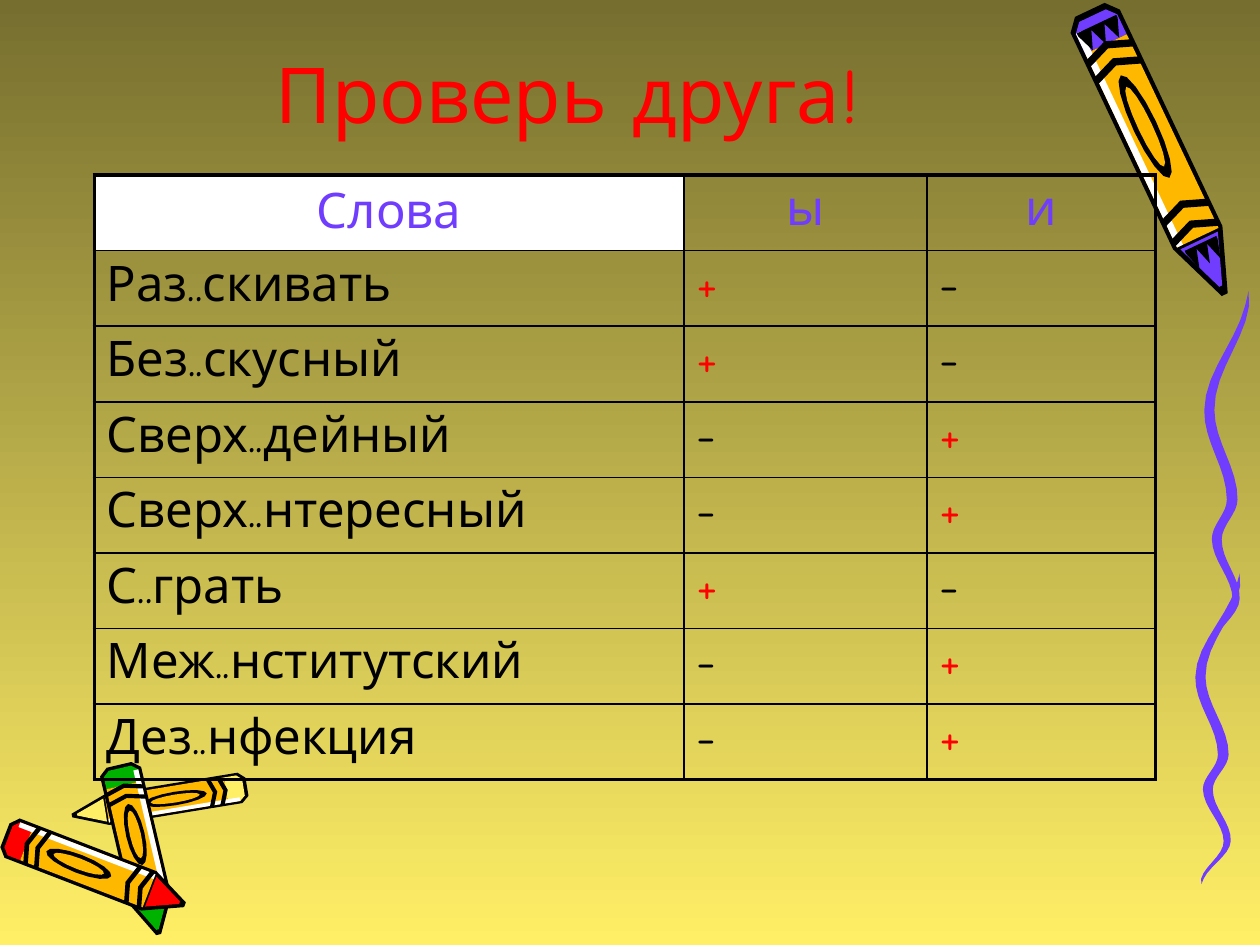
import math

import lxml.etree
import pptx
import pptx.dml.color
import pptx.enum.text
import pptx.oxml
import pptx.oxml.ns
import pptx.util

Cm, Pt = pptx.util.Cm, pptx.util.Pt
ALIGN, ANCHOR = pptx.enum.text.PP_ALIGN, pptx.enum.text.MSO_ANCHOR
qn = pptx.oxml.ns.qn

COLORS = {
    "olive": "766E2F", "sand": "FFEF66", "red": "FF0000", "violet": "703DFF",
    "black": "000000", "white": "FFFFFF", "orange": "FFB800", "green": "00B200",
}
FONT = "Comic Neue"
LETTERS = ("ы", "и")
WORDS = [
    ("Раз..скивать", "ы"), ("Без..скусный", "ы"), ("Сверх..дейный", "и"),
    ("Сверх..нтересный", "и"), ("С..грать", "ы"), ("Меж..нститутский", "и"),
    ("Дез..нфекция", "и"),
]
# Turning points of the ribbon in cm: x, y
RIBBON_TURNS = [(0.89, 0), (0.1, 2.4), (0.56, 4.2), (0.25, 5), (0.64, 6.2), (0.12, 7.2)]


def rgb(name):
    return pptx.dml.color.RGBColor.from_string(COLORS[name])


def write_text(frame, text, size=28, color="black", align=ALIGN.LEFT,
               anchor=ANCHOR.TOP, before=None):
    frame.word_wrap = True
    frame.vertical_anchor = anchor
    paragraph = frame.paragraphs[0]
    paragraph.alignment = align
    if before:  # space before, in percent of the line
        spacing = lxml.etree.SubElement(paragraph._p.get_or_add_pPr(), qn("a:spcBef"))
        lxml.etree.SubElement(spacing, qn("a:spcPct"), val=str(before * 1000))
    run = paragraph.add_run()
    run.text = text
    run.font.name, run.font.size = FONT, Pt(size)
    run.font.color.rgb = rgb(color)


def paint_background(slide):
    fill = slide.background.fill
    fill.gradient()
    fill.gradient_angle = 270
    for stop, name in zip(fill.gradient_stops, ("olive", "sand")):
        stop.color.rgb = rgb(name)


def draw_outline(slide, left, top, points, color):
    """Fill the outline through points, given in cm from the corner left, top."""
    corners = [(left + Cm(x), top + Cm(y)) for x, y in points]
    builder = slide.shapes.build_freeform(*corners[0])
    builder.add_line_segments(corners[1:], close=True)
    outline = builder.convert_to_shape()
    outline.shadow.inherit = False
    outline.fill.solid()
    outline.fill.fore_color.rgb = rgb(color)
    outline.line.fill.background()


# Crayon parts: (along, across) with along 0 at the butt and 1 at the tip,
# and across from -0.5 to 0.5 over the width.
def stripe(start, end, low=-0.42, high=0.42):
    return [(start, low), (end, low), (end, high), (start, high)]


def arched_band(start, thickness=0.025, rise=0.03):
    sides = [(start, -0.45), (start - rise, 0), (start, 0.45)]
    return sides + [(along + thickness, across) for along, across in reversed(sides)]


def oval(center, length, width, corners=16):
    angles = [2 * math.pi * i / corners for i in range(corners)]
    return [(center + length / 2 * math.cos(a), width / 2 * math.sin(a)) for a in angles]


def zigzag(base, depth, teeth, half=0.4):
    step = 2 * half / (2 * teeth)
    edge = [(base + depth * (i % 2), -half + i * step) for i in range(2 * teeth + 1)]
    return [(base - 0.01, -half)] + edge + [(base - 0.01, half)]


def draw_crayon(slide, left, top, butt, tip, width, color, light, teeth=0):
    """Draw a crayon from butt to tip; light is the side (1 or -1) of the highlight."""
    length = math.dist(butt, tip)
    dx, dy = ((end - start) / length for start, end in zip(butt, tip))

    def place(part):
        return [(butt[0] + along * length * dx - across * width * dy,
                 butt[1] + along * length * dy + across * width * dx)
                for along, across in part]

    silhouette = [(0, -0.3), (0.04, -0.5), (0.8, -0.5), (1, -0.06),
                  (1, 0.06), (0.8, 0.5), (0.04, 0.5), (0, 0.3)]
    parts = [
        ("black", silhouette),
        (color, [(0.02, -0.27), (0.05, -0.42), (0.12, -0.42),
                 (0.12, 0.42), (0.05, 0.42), (0.02, 0.27)]),
        ("orange", stripe(0.12, 0.8)),
        ("white", stripe(0.05, 0.8, light * 0.3, light * 0.42)),
        ("black", oval(0.41, 0.36, 0.44)),
        ("orange", oval(0.41, 0.28, 0.26)),
        (color, [(0.81, -0.38), (0.97, -0.03), (0.97, 0.03), (0.81, 0.38)]),
    ]
    parts += [("black", arched_band(start)) for start in (0.14, 0.2, 0.7, 0.77)]
    if teeth:
        parts += [("black", zigzag(base, 0.06, teeth, half))
                  for base, half in ((0.06, 0.4), (0.83, 0.32))]
    for part_color, part in parts:
        draw_outline(slide, left, top, place(part), part_color)


def draw_crayon_pile(slide, left, top):
    draw_crayon(slide, left, top, (4.98, 0.62), (1.45, 1.2), 0.62, "sand", light=-1)
    draw_crayon(slide, left, top, (2.4, 0.18), (3.2, 3.6), 0.85, "green", light=-1)
    draw_crayon(slide, left, top, (0.1, 1.6), (3.73, 3), 0.85, "red", light=-1)


def draw_ribbon(slide, left, top, stretch=1, thickness=0.22, steps=8):
    """Ease from turn to turn, thinning the ribbon towards both ends."""
    height = RIBBON_TURNS[-1][1]
    near, far = [], []
    for (x0, y0), (x1, y1) in zip(RIBBON_TURNS, RIBBON_TURNS[1:]):
        for i in range(steps + 1):
            y = y0 + (y1 - y0) * i / steps
            x = x0 + (x1 - x0) * (1 - math.cos(math.pi * i / steps)) / 2
            half = thickness / 2 * math.sqrt(abs(math.sin(math.pi * y / height)))
            near.append((x - half, y * stretch))
            far.append((x + half, y * stretch))
    draw_outline(slide, left, top, near + far[::-1], "violet")


def add_title(slide, left, top, width, height):
    title = slide.shapes.add_textbox(left, top, width, height)
    write_text(title.text_frame, "Проверь друга!", size=44, color="red",
               align=ALIGN.CENTER, anchor=ANCHOR.BOTTOM)


def set_borders(cell, widths):
    properties = cell._tc.get_or_add_tcPr()
    for index, (side, width) in enumerate(zip("LRTB", widths)):
        border = pptx.oxml.parse_xml(
            f'<a:ln{side} xmlns:a="http://schemas.openxmlformats.org/drawingml/2006/main"'
            f' w="{Pt(width)}"><a:solidFill><a:srgbClr val="{COLORS["black"]}"/>'
            f'</a:solidFill></a:ln{side}>')
        properties.insert(index, border)


def add_answers(slide, left, top, width, height):
    rows = [("Слова", *LETTERS)]
    rows += [(word, *("+" if letter == answer else "-" for letter in LETTERS))
             for word, answer in WORDS]
    last_row, last_column = len(rows) - 1, len(LETTERS)
    table = slide.shapes.add_table(len(rows), last_column + 1,
                                   left, top, width, height).table
    table.first_row = table.horz_banding = False
    shares = (4.68, 1.93, 1.81)
    for column, share in zip(table.columns, shares):
        column.width = int(width * share / sum(shares))

    for r, row in enumerate(rows):
        for c, text in enumerate(row):
            cell = table.cell(r, c)
            corner = r == c == 0
            if corner:
                cell.fill.solid()
                cell.fill.fore_color.rgb = rgb("white")
            else:
                cell.fill.background()
            outer = (c == 0, c == last_column, r == 0, r == last_row)
            set_borders(cell, [2.25 if edge else 1 for edge in outer])
            color = "violet" if r == 0 else "red" if text == "+" else "black"
            write_text(cell.text_frame, text, color=color, before=20,
                       align=ALIGN.CENTER if r == 0 else ALIGN.LEFT)
            cell.vertical_anchor = ANCHOR.MIDDLE if corner else ANCHOR.TOP


def main():
    deck = pptx.Presentation()
    deck.slide_width, deck.slide_height = Cm(25.4), Cm(19.05)
    slide = deck.slides.add_slide(deck.slide_layouts[6])
    paint_background(slide)
    # Decoration
    draw_crayon(slide, Cm(21.4), Cm(0.2), (0.57, 0), (3.29, 5.74), 1.1,
                "violet", light=1, teeth=3)
    draw_crayon_pile(slide, Cm(0), Cm(15.24))
    draw_ribbon(slide, Cm(24.1), Cm(11.56), stretch=0.87)
    draw_ribbon(slide, Cm(24.28), Cm(5.87))
    # Content
    add_title(slide, Cm(1.9), Cm(0.43), Cm(19.08), Cm(2.49))
    add_answers(slide, Cm(1.9), Cm(3.53), Cm(21.39), Cm(12.19))
    deck.save("out.pptx")


if __name__ == "__main__":
    main()
